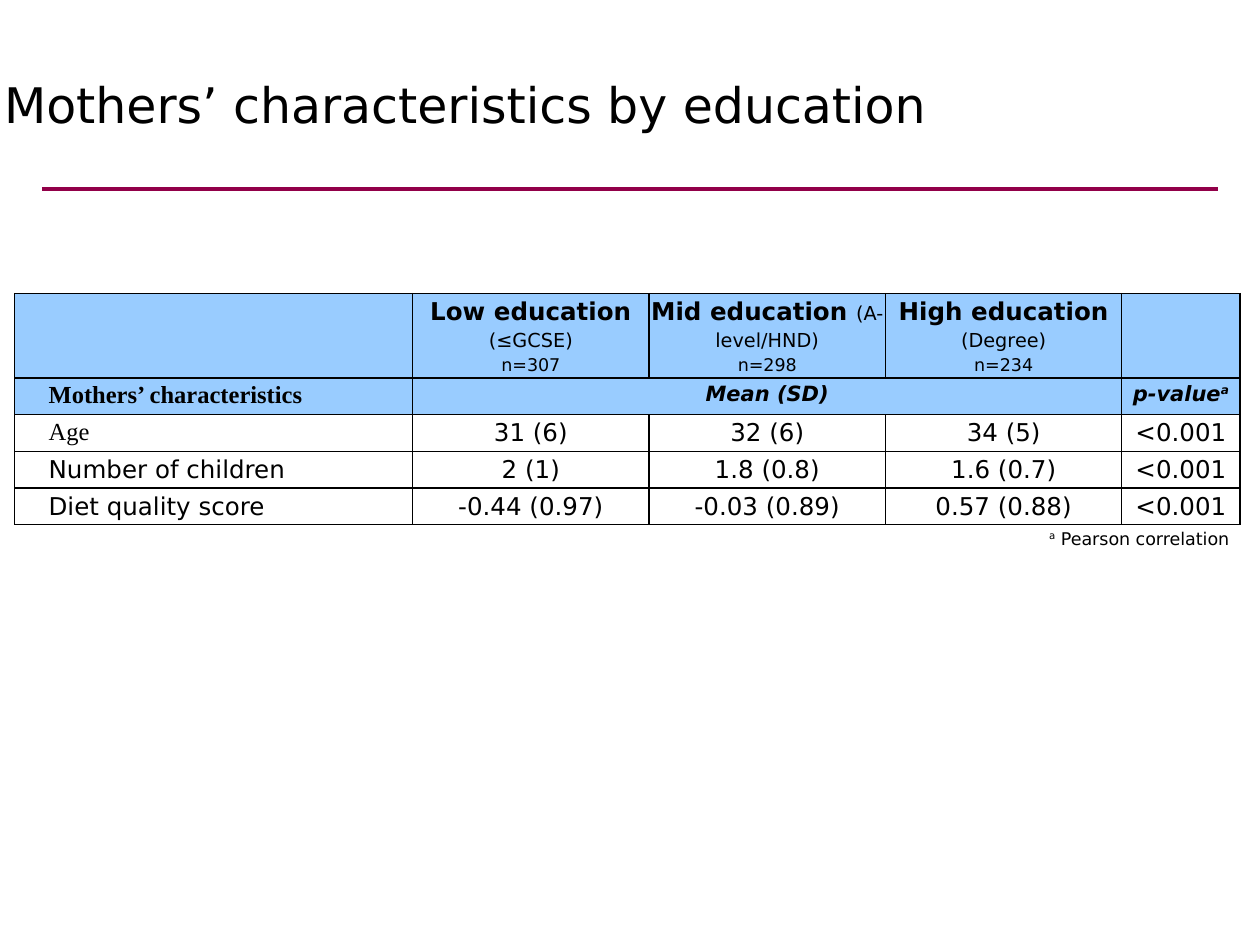
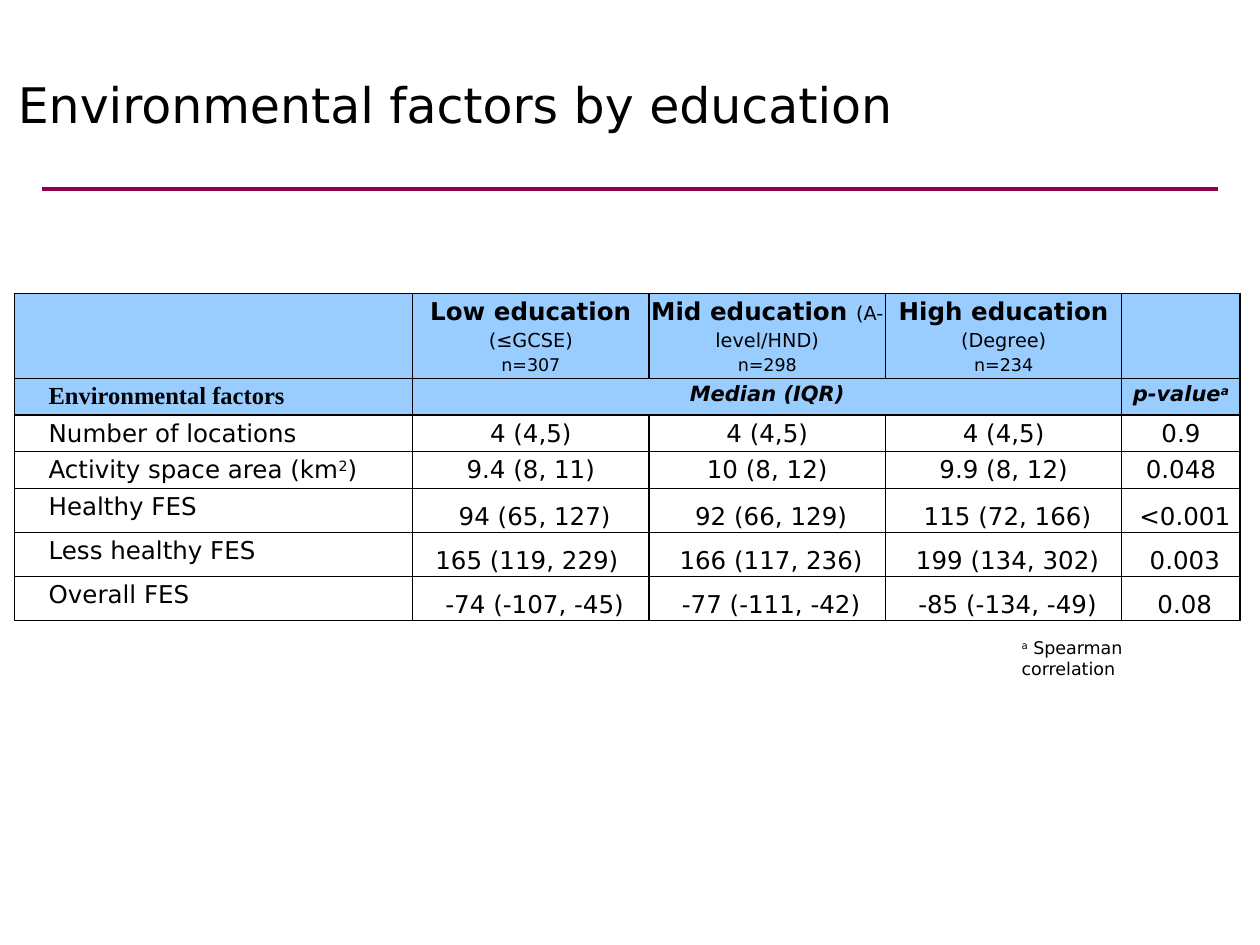
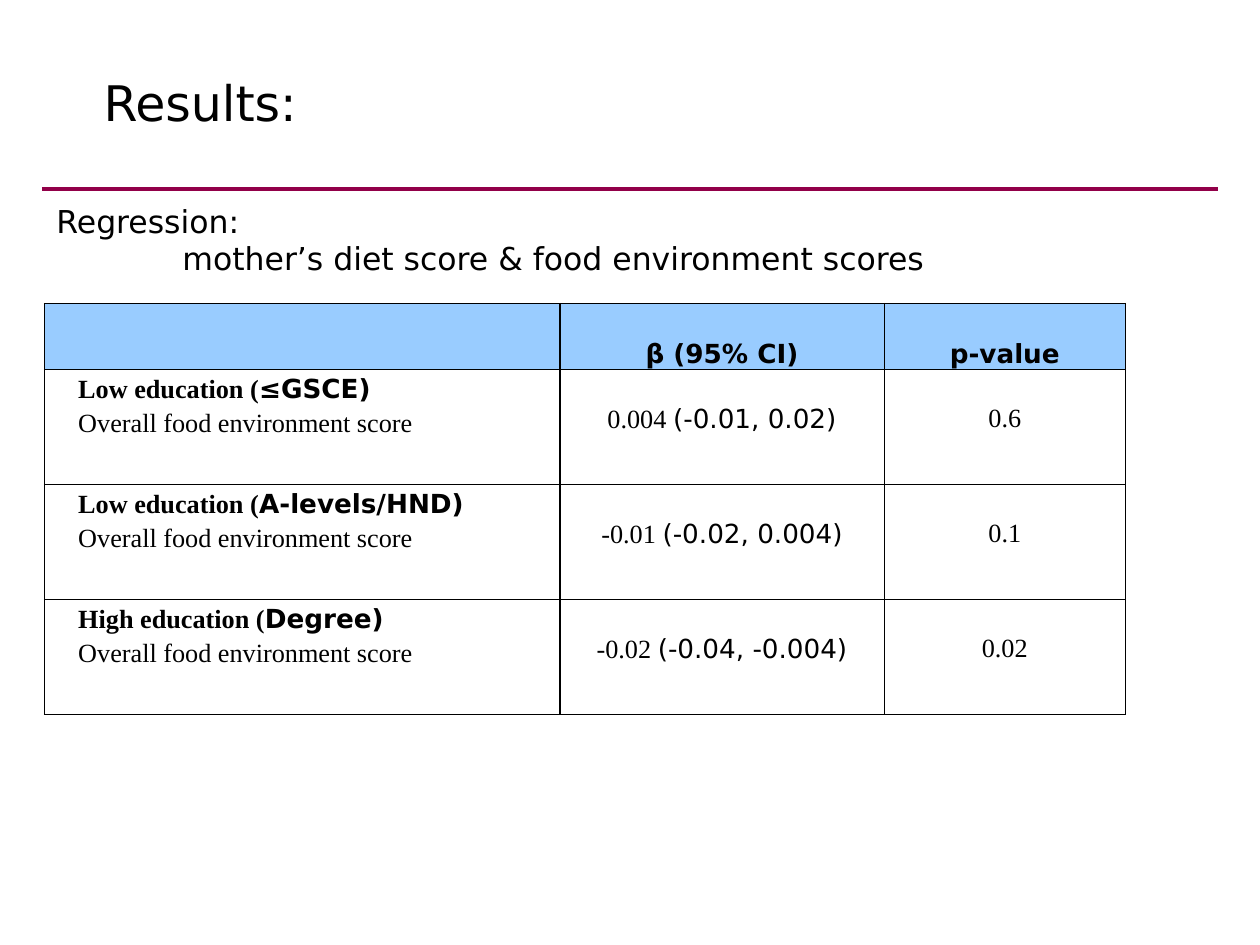
from lxml.etree import SubElement
from pptx import Presentation
from pptx.dml.color import RGBColor
from pptx.enum.shapes import MSO_CONNECTOR
from pptx.enum.text import MSO_ANCHOR, PP_ALIGN
from pptx.oxml import parse_xml
from pptx.oxml.ns import nsdecls, qn
from pptx.util import Pt

SANS, SERIF = "DejaVu Sans", "Times New Roman"
THEME = {
    "ink": RGBColor.from_string("000000"),
    "rule": RGBColor.from_string("920049"),
    "head": RGBColor.from_string("99CCFF"),
    "body": RGBColor.from_string("FFFFFF"),
    "border": "000000",
    "styles": {
        "title": {"name": SANS, "size": Pt(28)},
        "lead": {"name": SANS, "size": Pt(18)},
        "note": {"name": SANS, "size": Pt(10)},
        "group": {"name": SANS, "size": Pt(14), "bold": True},
        "level": {"name": SANS, "size": Pt(11)},
        "count": {"name": SANS, "size": Pt(10)},
        "topic": {"name": SERIF, "size": Pt(14), "bold": True},
        "measure": {"name": SANS, "size": Pt(12), "bold": True, "italic": True},
        "value": {"name": SANS, "size": Pt(14)},
        "serif_value": {"name": SERIF, "size": Pt(14)},
        "result": {"name": SANS, "size": Pt(15)},
        "result_bold": {"name": SANS, "size": Pt(15), "bold": True},
        "serif_result": {"name": SERIF, "size": Pt(15)},
        "serif_result_bold": {"name": SERIF, "size": Pt(15), "bold": True},
    },
}
SIDE, INDENT, SPACING = 5, 14.4, 1.15
FES_SPACING, FES_SHIFT = 1.5, 4.45
BLANK_LINE = 17.2

GROUPS = [
    [[("Low education", "group")], [("(≤GCSE)", "level")], [("n=307", "count")]],
    [[("Mid education ", "group"), ("(A-level/HND)", "level")], [("n=298", "count")]],
    [[("High education", "group")], [("(Degree)", "level")], [("n=234", "count")]],
]

COMPARISONS = [
    {
        "title": ("Mothers’ characteristics by education", -2.9, 37.4),
        "topic": "Mothers’ characteristics", "measure": "Mean (SD)",
        "heights": [46.9] + [20.95] * 4,
        "rows": [
            ([("Age", "serif_value")], "31 (6)", "32 (6)", "34 (5)", "<0.001"),
            ([("Number of children", "value")], "2 (1)", "1.8 (0.8)", "1.6 (0.7)", "<0.001"),
            ([("Diet quality score", "value")],
             "-0.44 (0.97)", "-0.03 (0.89)", "0.57 (0.88)", "<0.001"),
        ],
        "fes_rows": [],
        "note": (" Pearson correlation", 592.5, 298),
    },
    {
        "title": ("Environmental factors by education", 5, 37.4),
        "topic": "Environmental factors", "measure": "Median (IQR)",
        "heights": [48.5] + [20.95] * 3 + [25.1] * 3,
        "rows": [
            ([("Number of locations", "value")], "4 (4,5)", "4 (4,5)", "4 (4,5)", "0.9"),
            ([("Activity space area (km", "value"), ("2", "value", "sup"), (")", "value")],
             "9.4 (8, 11)", "10 (8, 12)", "9.9 (8, 12)", "0.048"),
        ],
        "fes_rows": [
            ([("Healthy FES", "value")],
             "94 (65, 127)", "92 (66, 129)", "115 (72, 166)", "<0.001"),
            ([("Less healthy FES", "value")],
             "165 (119, 229)", "166 (117, 236)", "199 (134, 302)", "0.003"),
            ([("Overall FES", "value")],
             "-74 (-107, -45)", "-77 (-111, -42)", "-85 (-134, -49)", "0.08"),
        ],
        "note": (" Spearman correlation", 576.7, 360.7),
    },
]
COMPARISON_COLS = [227.4, 135.1, 135.1, 135.1, 67.5]

REGRESSION_HEAD = ["β (95% CI)", "p-value"]
REGRESSION = [
    ("Low education (", "≤GSCE)", "0.004 ", "(-0.01, 0.02)", "0.6"),
    ("Low education (", "A-levels/HND)", "-0.01 ", "(-0.02, 0.004)", "0.1"),
    ("High education (", "Degree)", "-0.02 ", "(-0.04, -0.004)", "0.02"),
]
SCORE = "Overall food environment score"


def write(tf, paras, align=PP_ALIGN.LEFT, spacing=1, indents=()):
    """Each paragraph is a list of runs: (text, style[, "sup"])."""
    for i, runs in enumerate(paras):
        p = tf.paragraphs[0] if i == 0 else tf.add_paragraph()
        p.alignment, p.line_spacing = align, spacing
        if i < len(indents):
            p._p.get_or_add_pPr().set("marL", str(Pt(indents[i])))
        for text, style, *sup in runs:
            r = p.add_run()
            r.text = text
            for key, value in THEME["styles"][style].items():
                setattr(r.font, key, value)
            r.font.bold = bool(r.font.bold)
            r.font.color.rgb = THEME["ink"]
            if sup:
                r._r.get_or_add_rPr().set("baseline", "30000")


def add_text(s, x, y, w, h, paras, wrap=False, inset=(7.2, 3.6), indents=()):
    tf = s.shapes.add_textbox(Pt(x), Pt(y), Pt(w), Pt(h)).text_frame
    tf.word_wrap = wrap
    tf.margin_left = tf.margin_right = Pt(inset[0])
    tf.margin_top = tf.margin_bottom = Pt(inset[1])
    write(tf, paras, indents=indents)


def add_slide(prs, title, x, y):
    s = prs.slides.add_slide(prs.slide_layouts[6])
    rule = s.shapes.add_connector(MSO_CONNECTOR.STRAIGHT, Pt(24), Pt(108), Pt(696), Pt(108))
    rule.line.color.rgb, rule.line.width = THEME["rule"], Pt(1.75)
    SubElement(rule._element.spPr, qn("a:effectLst"))
    add_text(s, x, y, 600, 64, [[(title, "title")]], wrap=True, inset=(5.2, 5.2))
    return s


def add_grid(s, x, y, cols, heights, head_rows):
    """Add a bordered table whose first head_rows rows are shaded."""
    table = s.shapes.add_table(len(heights), len(cols), Pt(x), Pt(y),
                               Pt(sum(cols)), Pt(sum(heights))).table
    table.first_row = table.horz_banding = False
    for col, width in zip(table.columns, cols):
        col.width = Pt(width)
    for i, (row, height) in enumerate(zip(table.rows, heights)):
        row.height = Pt(height)
        for c in row.cells:
            c.fill.solid()
            c.fill.fore_color.rgb = THEME["head" if i < head_rows else "body"]
            c.margin_left = c.margin_right = c.margin_top = c.margin_bottom = 0
            for at, side in enumerate("LRTB"):
                c._tc.tcPr.insert(at, parse_xml(
                    f'<a:ln{side} {nsdecls("a")} w="{Pt(0.75)}"><a:solidFill>'
                    f'<a:srgbClr val="{THEME["border"]}"/></a:solidFill></a:ln{side}>'))
    return table


def fill_cell(c, paras, left=SIDE, right=SIDE, top=0, anchor=MSO_ANCHOR.TOP,
              align=PP_ALIGN.CENTER, spacing=SPACING, indent=0):
    c.margin_left, c.margin_right, c.margin_top = Pt(left), Pt(right), Pt(top)
    c.vertical_anchor = anchor
    write(c.text_frame, paras, align, spacing, [indent] * len(paras))


def fill_label(c, paras):
    fill_cell(c, paras, align=PP_ALIGN.LEFT, indent=INDENT)


def comparison_slide(prs, data):
    s = add_slide(prs, *data["title"])
    table = add_grid(s, 8.4, 167.7, COMPARISON_COLS, data["heights"], 2)
    for j, paras in enumerate(GROUPS, 1):
        fill_cell(table.cell(0, j), paras, left=0, right=0)
    table.cell(1, 1).merge(table.cell(1, 3))
    fill_label(table.cell(1, 0), [[(data["topic"], "topic")]])
    fill_cell(table.cell(1, 1), [[(data["measure"], "measure")]])
    fill_cell(table.cell(1, 4), [[("p-value", "measure"), ("a", "measure", "sup")]])
    fes_start = 2 + len(data["rows"])
    for i, (label, *values) in enumerate(data["rows"] + data["fes_rows"], 2):
        fill_label(table.cell(i, 0), [label])
        for j, value in enumerate(values, 1):
            layout = {}
            if i >= fes_start:
                layout = {"left": FES_SHIFT, "right": 0, "spacing": FES_SPACING}
                if (i, j) == (fes_start + 1, 1):
                    layout["right"] = 2 * FES_SHIFT
            fill_cell(table.cell(i, j), [[(value, "value")]], **layout)
    note, x, y = data["note"]
    add_text(s, x, y, 125, 19.4, [[("a", "note", "sup"), (note, "note")]])


def regression_slide(prs):
    s = add_slide(prs, "Results:", 54, 36)
    table = add_grid(s, 25.3, 173.4, [294.7, 185.2, 138], [37.7] + [65.75] * 3, 1)
    for j, text in enumerate(REGRESSION_HEAD, 1):
        fill_cell(table.cell(0, j), [[(text, "result_bold")]], anchor=MSO_ANCHOR.BOTTOM)
    for i, (group, level, beta, interval, p_value) in enumerate(REGRESSION, 1):
        fill_label(table.cell(i, 0), [
            [(group, "serif_result_bold"), (level, "result_bold")],
            [(SCORE, "serif_result")]])
        fill_cell(table.cell(i, 1), [[(beta, "serif_result"), (interval, "result")]],
                  top=BLANK_LINE)
        fill_cell(table.cell(i, 2), [[(p_value, "serif_result")]], top=BLANK_LINE)
    add_text(s, 25.2, 111.6, 515, 51, [
        [("Regression:", "lead")],
        [("mother’s diet score & food environment scores", "lead")]], indents=(0, 72))


def main():
    prs = Presentation()
    prs.slide_width, prs.slide_height = Pt(720), Pt(540)
    for data in COMPARISONS:
        comparison_slide(prs, data)
    regression_slide(prs)
    prs.save("out.pptx")


if __name__ == "__main__":
    main()
